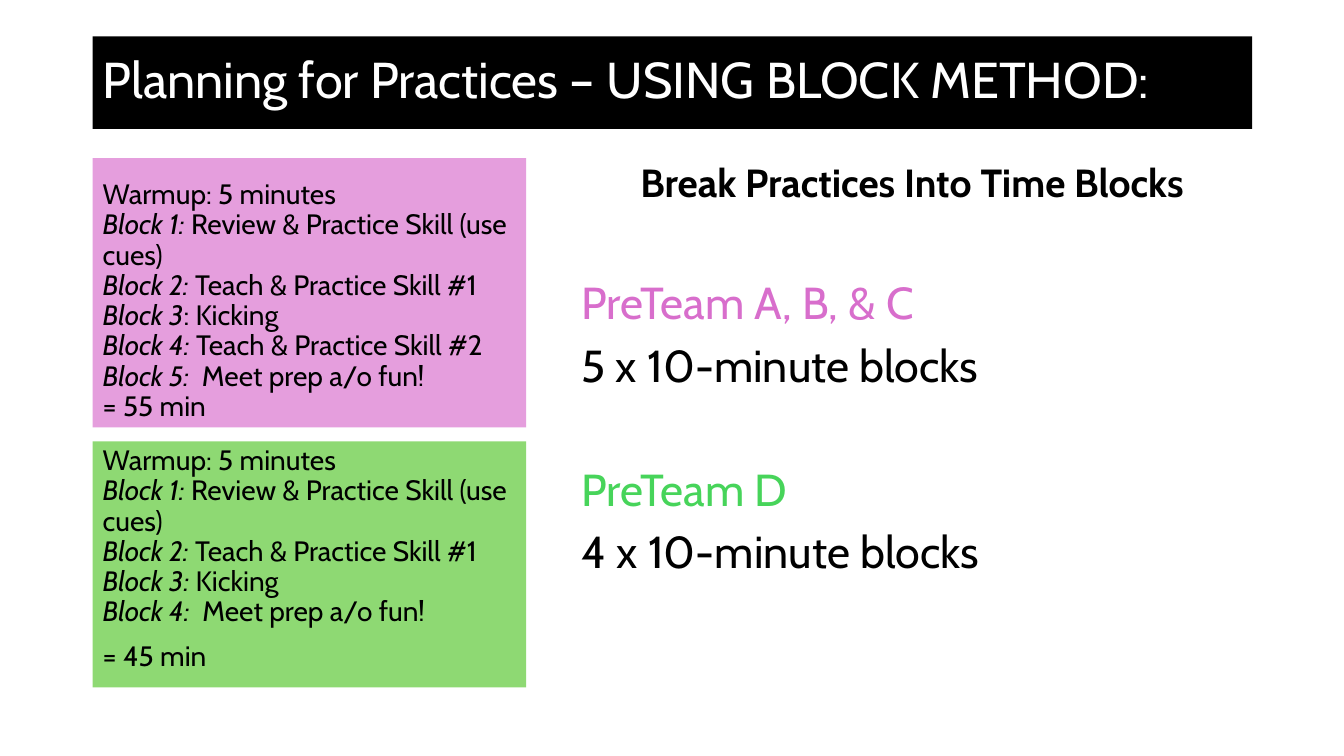
from pptx import Presentation
from pptx.dml.color import RGBColor
from pptx.enum.shapes import MSO_SHAPE
from pptx.enum.text import MSO_ANCHOR, PP_ALIGN
from pptx.util import Inches, Pt

RECT = MSO_SHAPE.RECTANGLE
TOP, MIDDLE, BOTTOM = MSO_ANCHOR.TOP, MSO_ANCHOR.MIDDLE, MSO_ANCHOR.BOTTOM
LEFT, CENTER = PP_ALIGN.LEFT, PP_ALIGN.CENTER

COLORS = {
    "black": "000000", "white": "FFFFFF", "pink": "E59EDD",
    "green": "8ED973", "orchid": "D86ECC", "lime": "47D45A",
}
FONT = "Cabin"
MARGIN, FULL_W, PLAN_W, SUMMARY_X = 0.92, 11.5, 4.3, 5.67

TITLE = "Planning for Practices – USING BLOCK METHOD:"
LONG_PLAN = [
    ("", "Warmup: 5 minutes"),
    ("Block 1: ", "Review & Practice Skill (use cues)"),
    ("Block 2: ", "Teach & Practice Skill #1"),
    ("Block 3", ": Kicking"),
    ("Block 4: ", "Teach & Practice Skill #2"),
    ("Block 5:  ", "Meet prep a/o fun!"),
    ("", "= 55 min"),
]
SHORT_PLAN = [
    ("", "Warmup: 5 minutes"),
    ("Block 1: ", "Review & Practice Skill (use cues)"),
    ("Block 2: ", "Teach & Practice Skill #1"),
    ("Block 3: ", "Kicking"),
    ("Block 4:  ", "Meet prep a/o fun!"),
    ("", "= 45 min"),
]
HEADING = "Break Practices Into Time Blocks"
TEAMS = [
    ("PreTeam A, B, & C", "orchid", "5 x 10-minute blocks"),
    ("PreTeam D", "lime", "4 x 10-minute blocks"),
]


def line(runs, size, color="black", before=0, align=LEFT):
    return {"runs": runs, "size": size, "color": color,
            "before": before, "align": align}


def plan_lines(plan, total_gap):
    last = len(plan) - 1
    return [line([(label, {"italic": True}), (text, {"italic": False})], 20,
                 before=total_gap if i == last else 0)
            for i, (label, text) in enumerate(plan)]


def summary_lines():
    lines = [line([(HEADING, {"bold": True})], 28, align=CENTER)]
    for team, color, blocks in TEAMS:
        lines.append(line([(team, {})], 32, color, before=54))
        lines.append(line([(blocks, {})], 32, before=10))
    return lines


def write(sp, lines, anchor):
    tf = sp.text_frame
    tf.word_wrap = True
    tf.vertical_anchor = anchor
    for i, item in enumerate(lines):
        p = tf.add_paragraph() if i else tf.paragraphs[0]
        layout = {"alignment": item["align"], "line_spacing": 0.9,
                  "space_before": Pt(item["before"])}
        for name, value in layout.items():
            setattr(p, name, value)
        for text, style in item["runs"]:
            if not text:
                continue
            r = p.add_run()
            r.text = text
            for name, value in {"name": FONT, "size": Pt(item["size"]), **style}.items():
                setattr(r.font, name, value)
            r.font.color.rgb = RGBColor.from_string(COLORS[item["color"]])


def add_panel(s, box, fill, lines, anchor):
    sp = s.shapes.add_shape(RECT, *map(Inches, box))
    sp.shadow.inherit = False
    sp.fill.solid()
    sp.fill.fore_color.rgb = RGBColor.from_string(COLORS[fill])
    sp.line.fill.background()
    write(sp, lines, anchor)


def main():
    prs = Presentation()
    prs.slide_width, prs.slide_height = Inches(13.33), Inches(7.5)
    s = prs.slides.add_slide(prs.slide_layouts[6])
    panels = [
        ((MARGIN, 0.36, FULL_W, 0.92), "black",
         [line([(TITLE, {})], 36, "white")], MIDDLE),
        ((MARGIN, 1.57, PLAN_W, 2.67), "pink", plan_lines(LONG_PLAN, 0), BOTTOM),
        ((MARGIN, 4.38, PLAN_W, 2.44), "green", plan_lines(SHORT_PLAN, 10), TOP),
    ]
    for panel in panels:
        add_panel(s, *panel)
    summary_w = MARGIN + FULL_W - SUMMARY_X
    summary = s.shapes.add_textbox(*map(Inches, (SUMMARY_X, 1.57, summary_w, 4.84)))
    write(summary, summary_lines(), TOP)
    prs.save("out.pptx")


if __name__ == "__main__":
    main()
